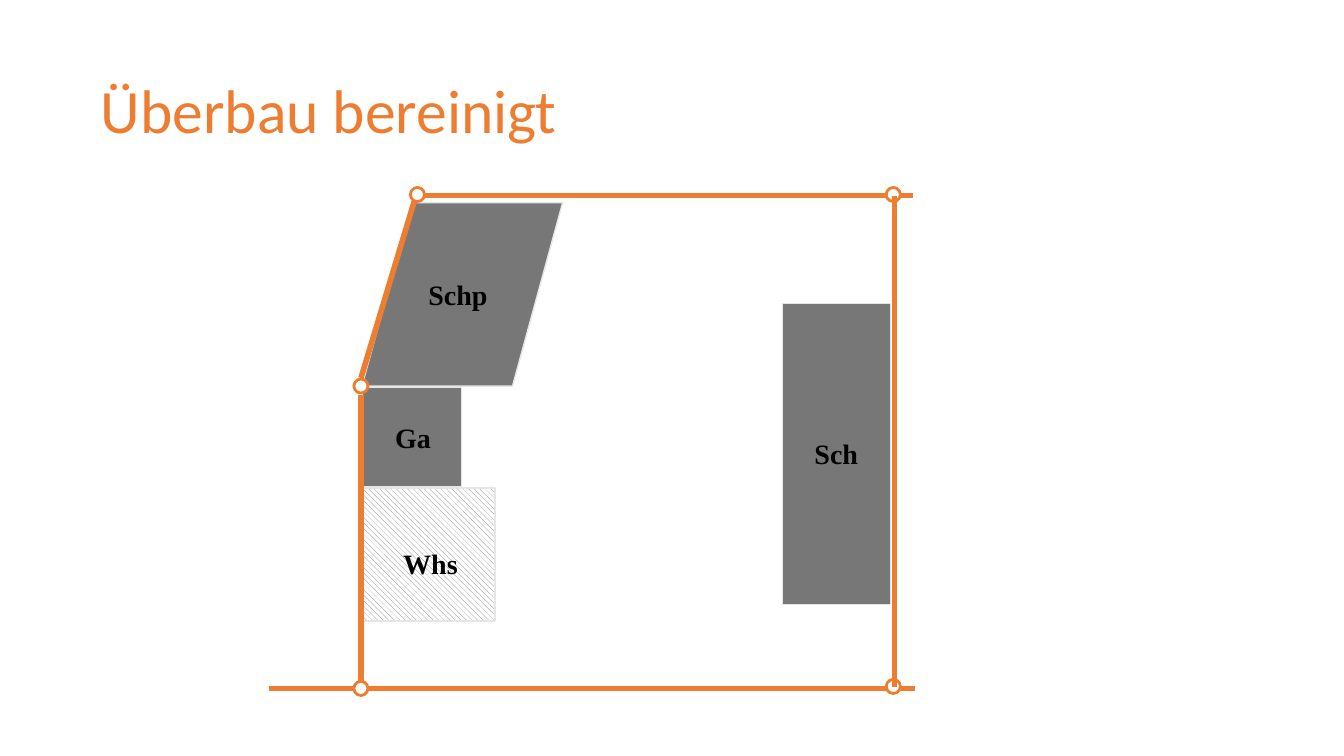
import pptx
import pptx.util
import pptx.dml.color
import pptx.enum.dml
import pptx.enum.shapes
import pptx.enum.text
import pptx.oxml
import pptx.oxml.ns

Inches = pptx.util.Inches
Pt = pptx.util.Pt
shape_kind = pptx.enum.shapes.MSO_SHAPE
pattern_kind = pptx.enum.dml.MSO_PATTERN
colours = {"boundary": "ED7D31", "building": "777777", "edge": "E7E6E6",
           "paper": "FFFFFF", "label": "000000"}


def colour(name):
    return pptx.dml.color.RGBColor.from_string(colours[name])


def add_text(area, words, font, size, tint, bold):
    box = page.shapes.add_textbox(*[Inches(length) for length in area])
    span = box.text_frame.paragraphs[0].add_run()
    span.text = words
    span.font.name = font
    span.font.size = Pt(size)
    span.font.bold = bold
    span.font.color.rgb = colour(tint)
    return box.text_frame


deck = pptx.Presentation()
deck.slide_width = Inches(13.33)
deck.slide_height = Inches(7.5)
page = deck.slides.add_slide(deck.slide_layouts[6])

title = add_text((0.92, 0.4, 11.5, 1.45), "Überbau bereinigt", "Calibri", 44, "boundary", False)
title.word_wrap = True
title.vertical_anchor = pptx.enum.text.MSO_ANCHOR.MIDDLE
title.margin_left = title.margin_right = Inches(0.08)
title.margin_top = title.margin_bottom = Inches(0.04)
title.paragraphs[0].line_spacing = 0.9

solid = pattern_kind.DARK_HORIZONTAL
hatched = pattern_kind.WIDE_DOWNWARD_DIAGONAL
buildings = [
    ("Schp", shape_kind.PARALLELOGRAM, solid, (3.59, 2.01, 1.99, 1.82), (4.15, 2.7, 0.8, 0.44)),
    ("Ga", shape_kind.RECTANGLE, solid, (3.59, 3.84, 0.99, 0.99), (3.82, 4.12, 0.56, 0.44)),
    ("Whs", shape_kind.RECTANGLE, hatched, (3.59, 4.84, 1.32, 1.32), (3.9, 5.37, 0.75, 0.44)),
    ("Sch", shape_kind.RECTANGLE, solid, (7.76, 3.01, 1.07, 2.99), (7.98, 4.28, 0.64, 0.44)),
]
for name, kind, pattern, area, label_area in buildings:
    building = page.shapes.add_shape(kind, *[Inches(length) for length in area])
    building.shadow.inherit = False
    if kind == shape_kind.PARALLELOGRAM:
        building.adjustments[0] = 0.273
    building.fill.patterned()
    building.fill.pattern = pattern
    building.fill.fore_color.rgb = colour("building")
    building.fill.back_color.rgb = colour("paper")
    building.line.color.rgb = colour("edge")
    building.line.width = Pt(1)
    label = add_text(label_area, name, "Times New Roman", 20, "label", True)
    label.word_wrap = False
    label.auto_size = pptx.enum.text.MSO_AUTO_SIZE.SHAPE_TO_FIT_TEXT

left, right, top, bottom = 3.58, 8.87, 1.94, 6.83
boundaries = [
    (4.15, top, 9.06, top, 4),
    (left, 3.75, 4.15, 1.86, 4),
    (left, 4.42, left, bottom, 4),
    (2.67, bottom, 9.08, bottom, 4),
    (left, 4.25, left, 3.92, 4),
    (left, 4.17, left, 4.42, 4),
    (right, top, right, 6.82, 3.5),
]
markers = [(4.07, 1.86), (3.51, 6.76), (3.51, 3.76), (8.79, 1.86), (8.79, 6.74)]

for *ends, width in boundaries:
    if ends[0] == right:
        for across, down in markers:
            marker = page.shapes.add_shape(shape_kind.OVAL, Inches(across), Inches(down),
                                           Inches(0.14), Inches(0.14))
            marker.shadow.inherit = False
            marker.fill.solid()
            marker.fill.fore_color.rgb = colour("paper")
            marker.line.color.rgb = colour("boundary")
            marker.line.width = Pt(2)
    boundary = page.shapes.add_connector(pptx.enum.shapes.MSO_CONNECTOR.STRAIGHT,
                                         *[Inches(length) for length in ends])
    boundary.line.color.rgb = colour("boundary")
    boundary.line.width = Pt(width)
    boundary._element.spPr.append(pptx.oxml.parse_xml(
        "<a:effectLst %s/>" % pptx.oxml.ns.nsdecls("a")))

deck.save("out.pptx")
